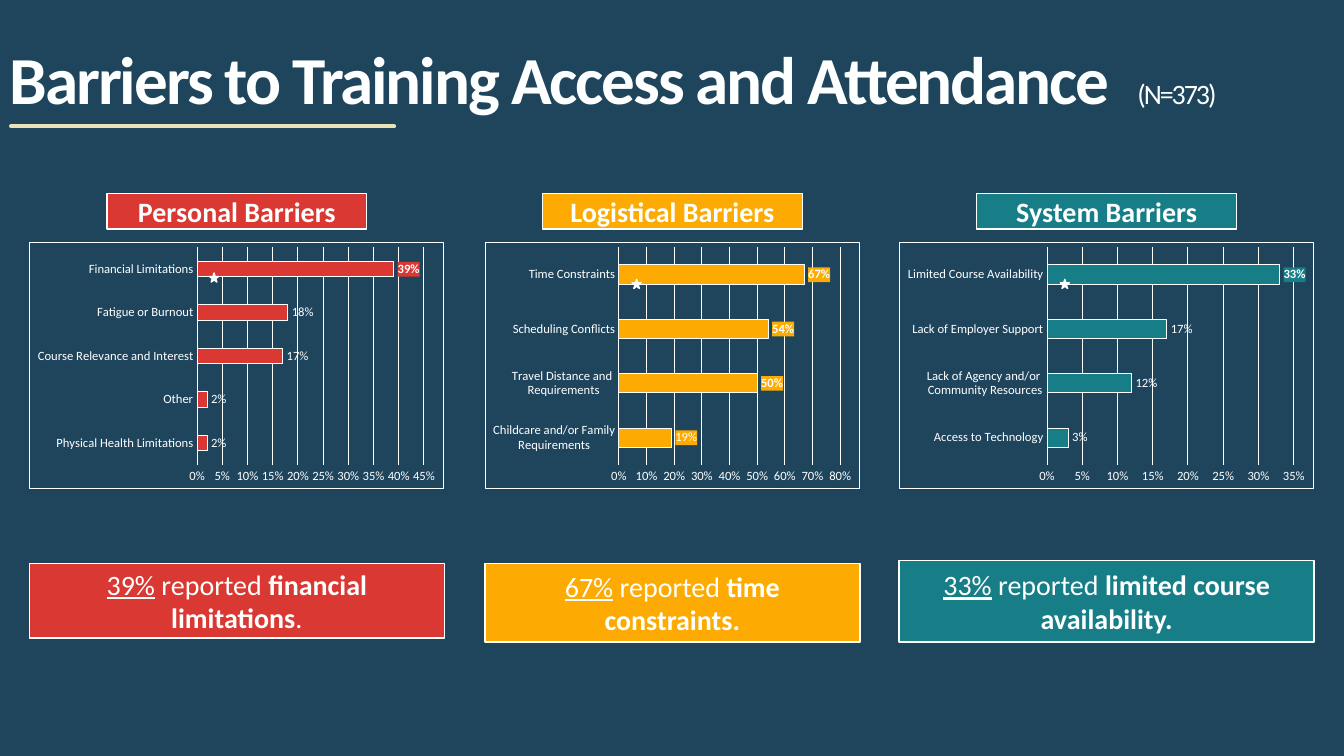
import pptx
import pptx.chart.data
import pptx.dml.color
import pptx.enum.chart
import pptx.enum.shapes
import pptx.enum.text
import pptx.oxml
import pptx.oxml.ns
import pptx.util
from pptx.util import Cm, Pt

COLORS = {
    "background": "1F455D", "white": "FEFFFF", "rule": "E9E1B7",
    "personal": "DA3933", "logistical": "FDAB02", "system": "177E88",
}
HIGHLIGHT_FROM = 0.19
BOLD_FROM = 0.33
HEADER_WIDTH = 6.55

# plot: left and width of the plot area, as shares of the chart width
BARRIERS = [
    dict(color="system", title="System Barriers", left=22.66, width=10.46,
         bars=[("Access to Technology", 0.03),
               ("Lack of Agency and/or \nCommunity Resources", 0.12),
               ("Lack of Employer Support", 0.17),
               ("Limited Course Availability", 0.33)],
         maximum=0.35, step=0.05, plot=(0.356, 0.596), star=(26.72, 7.04),
         callout=(14.12, 2.06), percent="33%",
         finding="limited course availability.", ending=""),
    dict(color="logistical", title="Logistical Barriers", left=12.22, width=9.45,
         bars=[("Childcare and/or Family\nRequirements", 0.19),
               ("Travel Distance and \nRequirements", 0.50),
               ("Scheduling Conflicts", 0.54),
               ("Time Constraints", 0.67)],
         maximum=0.8, step=0.1, plot=(0.357, 0.592), star=(15.93, 7.04),
         callout=(14.2, 1.98), percent="67%",
         finding="time constraints.", ending=""),
    dict(color="personal", title="Personal Barriers", left=0.74, width=10.46,
         bars=[("Physical Health Limitations", 0.02),
               ("Other", 0.02),
               ("Course Relevance and Interest", 0.17),
               ("Fatigue or Burnout", 0.18),
               ("Financial Limitations", 0.39)],
         maximum=0.45, step=0.05, plot=(0.404, 0.548), star=(5.28, 6.88),
         callout=(14.2, 1.88), percent="39%",
         finding="financial limitations", ending="."),
]


def rgb(name):
    return pptx.dml.color.RGBColor.from_string(COLORS[name])


def chart_xml(text):
    """Parse a chart element that uses the c: and a: prefixes."""
    head, tail = text.split(">", 1)
    slash = "/" if head.endswith("/") else ""
    namespaces = pptx.oxml.ns.nsdecls("c", "a")
    return pptx.oxml.parse_xml(f"{head.rstrip('/')} {namespaces}{slash}>{tail}")


class BarrierSlide:
    def __init__(self, presentation, font="Calibri"):
        self.font = font
        self.slide = presentation.slides.add_slide(presentation.slide_layouts[6])
        self.slide.background.fill.solid()
        self.slide.background.fill.fore_color.rgb = rgb("background")

    def style_font(self, font, size, bold=False):
        font.name, font.size, font.bold = self.font, Pt(size), bold
        font.color.rgb = rgb("white")

    def style_line(self, line, width, color="white"):
        line.color.rgb = rgb(color)
        line.width = Pt(width)

    def run(self, paragraph, text, size=20, bold=False, underline=False, spacing=None):
        run = paragraph.add_run()
        run.text = text
        self.style_font(run.font, size, bold)
        if underline:
            run.font.underline = True
        if spacing is not None:
            run.font._element.set("spc", str(int(spacing * 100)))

    def title(self, runs):
        box = self.slide.shapes.add_textbox(Cm(0), Cm(0.84), Cm(33.12), Cm(2.29))
        frame = box.text_frame
        frame.word_wrap = True
        frame.vertical_anchor = pptx.enum.text.MSO_ANCHOR.BOTTOM
        paragraph = frame.paragraphs[0]
        paragraph.line_spacing = 0.9
        for text, size, bold, spacing in runs:
            self.run(paragraph, text, size, bold, spacing=spacing)

    def rule(self, left, right, top):
        connector = self.slide.shapes.add_connector(
            pptx.enum.shapes.MSO_CONNECTOR.STRAIGHT, Cm(left), Cm(top), Cm(right), Cm(top))
        self.style_line(connector.line, 3, "rule")
        connector.line._get_or_add_ln().set("cap", "rnd")
        connector._element.spPr.append(
            pptx.oxml.parse_xml(f"<a:effectLst {pptx.oxml.ns.nsdecls('a')}/>"))

    def shape(self, kind, left, top, width, height, color):
        shape = self.slide.shapes.add_shape(kind, Cm(left), Cm(top), Cm(width), Cm(height))
        shape.shadow.inherit = False
        shape.fill.solid()
        shape.fill.fore_color.rgb = rgb(color)
        self.style_line(shape.line, 1)
        return shape

    def banner(self, left, top, width, height, color, runs):
        """Filled rectangle with centred text; runs are (text, bold, underline)."""
        kind = pptx.enum.shapes.MSO_SHAPE.RECTANGLE
        frame = self.shape(kind, left, top, width, height, color).text_frame
        frame.word_wrap = True
        frame.vertical_anchor = pptx.enum.text.MSO_ANCHOR.MIDDLE
        paragraph = frame.paragraphs[0]
        paragraph.alignment = pptx.enum.text.PP_ALIGN.CENTER
        for text, bold, underline in runs:
            self.run(paragraph, text, bold=bold, underline=underline)

    def star(self, left, top):
        self.shape(pptx.enum.shapes.MSO_SHAPE.STAR_5_POINT, left, top, 0.23, 0.23, "white")

    def bar_chart(self, left, top, width, height, color, bars, maximum, step, plot):
        data = pptx.chart.data.CategoryChartData(number_format="0%")
        data.categories = [label for label, value in bars]
        data.add_series("Series 1", [value for label, value in bars])
        chart = self.slide.shapes.add_chart(
            pptx.enum.chart.XL_CHART_TYPE.BAR_CLUSTERED,
            Cm(left), Cm(top), Cm(width), Cm(height), data).chart
        chart.has_title = chart.has_legend = False
        self.style_font(chart.font, 10)
        chart.plots[0].gap_width = 182
        chart.plots[0].vary_by_categories = False
        self.frame_chart(chart, plot)
        self.style_axes(chart, maximum, step)
        self.style_bars(chart.plots[0].series[0], color, bars)

    def frame_chart(self, chart, plot):
        """Outline the chart and fix the place of its plot area."""
        root = chart.element
        root.find(pptx.oxml.ns.qn("c:txPr")).addprevious(chart_xml(
            '<c:spPr><a:noFill/><a:ln w="9525"><a:solidFill>'
            f'<a:srgbClr val="{COLORS["white"]}"/></a:solidFill></a:ln></c:spPr>'))
        area = root.find(".//" + pptx.oxml.ns.qn("c:plotArea"))
        for layout in area.findall(pptx.oxml.ns.qn("c:layout")):
            area.remove(layout)
        area.insert(0, chart_xml(
            '<c:layout><c:manualLayout><c:layoutTarget val="inner"/>'
            '<c:xMode val="edge"/><c:yMode val="edge"/>'
            f'<c:x val="{plot[0]}"/><c:y val="0.02"/>'
            f'<c:w val="{plot[1]}"/><c:h val="0.885"/></c:manualLayout></c:layout>'))

    def style_axes(self, chart, maximum, step):
        for axis in (chart.category_axis, chart.value_axis):
            axis.major_tick_mark = axis.minor_tick_mark = pptx.enum.chart.XL_TICK_MARK.NONE
            self.style_font(axis.tick_labels.font, 9)
        self.style_line(chart.category_axis.format.line, 0.75)
        values = chart.value_axis
        values.minimum_scale, values.maximum_scale, values.major_unit = 0, maximum, step
        values.format.line.fill.background()
        values.has_major_gridlines = True
        self.style_line(values.major_gridlines.format.line, 0.75)
        values.tick_labels.number_format = "0%"
        values.tick_labels.number_format_is_linked = False

    def style_bars(self, series, color, bars):
        series.format.fill.solid()
        series.format.fill.fore_color.rgb = rgb(color)
        self.style_line(series.format.line, 0.75)
        outside = pptx.enum.chart.XL_LABEL_POSITION.OUTSIDE_END
        labels = series.data_labels
        labels.show_value = True
        labels.position = outside
        labels.number_format = "0%"
        labels.number_format_is_linked = False
        self.style_font(labels.font, 9)
        for index, (category, value) in enumerate(bars):
            if value >= HIGHLIGHT_FROM:
                label = series.points[index].data_label
                self.style_font(label.font, 9, value >= BOLD_FROM)
                label.position = outside
        for text in series._element.findall(".//" + pptx.oxml.ns.qn("c:dLbl")
                                            + "/" + pptx.oxml.ns.qn("c:txPr")):
            text.addprevious(chart_xml(
                f'<c:spPr><a:solidFill><a:srgbClr val="{COLORS[color]}"/>'
                '</a:solidFill></c:spPr>'))


def main():
    presentation = pptx.Presentation()
    presentation.slide_width, presentation.slide_height = Cm(33.87), Cm(19.05)
    slide = BarrierSlide(presentation)
    slide.rule(0.28, 9.93, 3.18)
    slide.title([("Barriers to Training Access and Attendance", 48, True, -1.5),
                 (" ", 47, True, 9), ("(N=373)", 20, False, -1.5)])
    for barrier in BARRIERS:
        color, left, width = barrier["color"], barrier["left"], barrier["width"]
        slide.bar_chart(left, 6.1, width, 6.22, color, barrier["bars"],
                        barrier["maximum"], barrier["step"], barrier["plot"])
        slide.banner(left + (width - HEADER_WIDTH) / 2, 4.88, HEADER_WIDTH, 0.89, color,
                     [(barrier["title"], True, False)])
        slide.star(*barrier["star"])
        callout_top, callout_height = barrier["callout"]
        runs = [(barrier["percent"], False, True), (" reported ", False, False),
                (barrier["finding"], True, False)]
        if barrier["ending"]:
            runs.append((barrier["ending"], False, False))
        slide.banner(left, callout_top, width, callout_height, color, runs)
    presentation.save("out.pptx")


if __name__ == "__main__":
    main()
